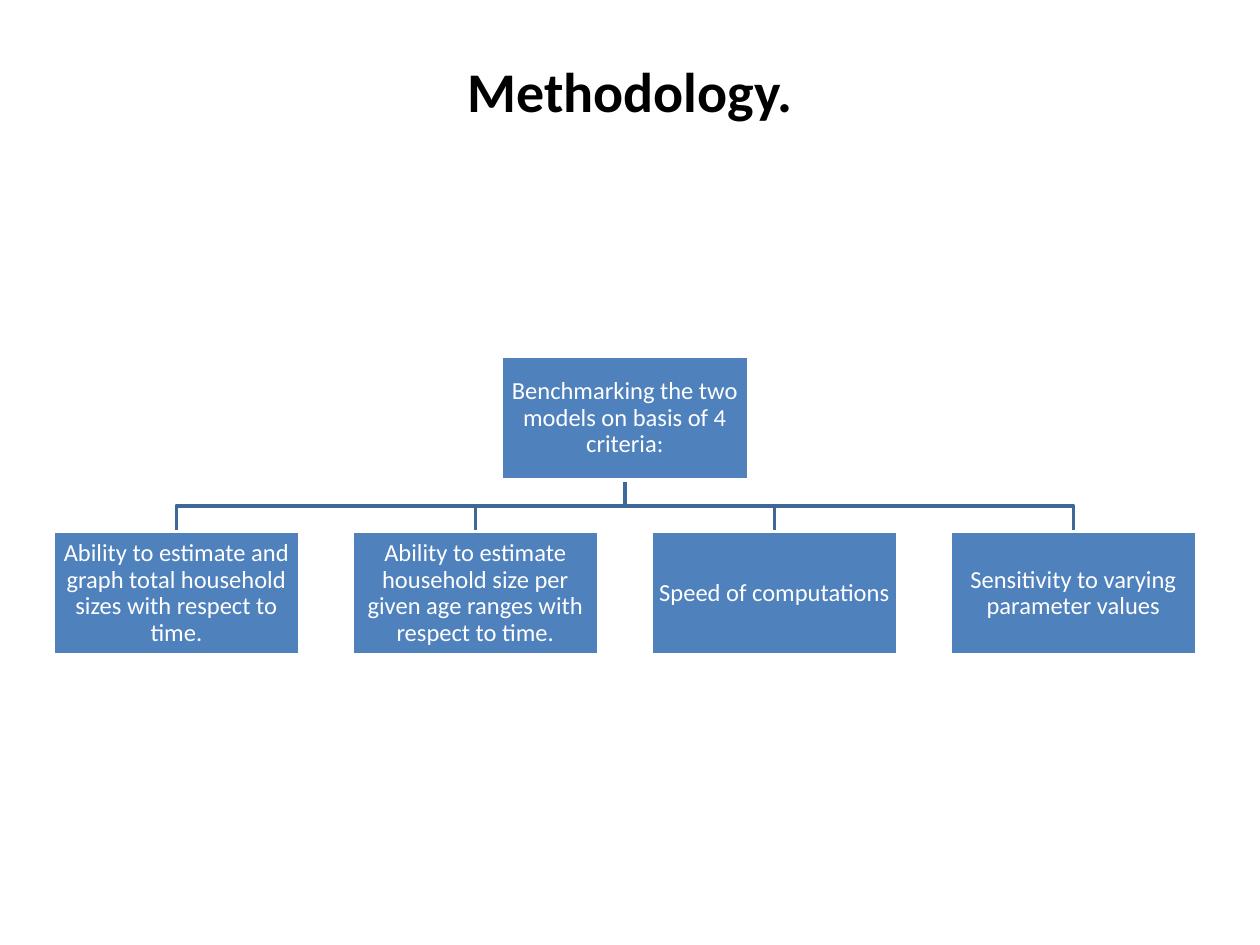
from pptx import Presentation
from pptx.dml.color import RGBColor
from pptx.enum.shapes import MSO_SHAPE
from pptx.enum.text import MSO_ANCHOR, PP_ALIGN
from pptx.util import Inches, Pt

TITLE = "Methodology."
ROOT = "Benchmarking the two models on basis of 4 criteria:"
CRITERIA = [
    "Ability to estimate and graph total household sizes with respect to time.",
    "Ability to estimate household size per given age ranges with respect to time.",
    "Speed of computations",
    "Sensitivity to varying parameter values",
]

FONT = "Calibri"
BLACK = RGBColor(0x00, 0x00, 0x00)
WHITE = RGBColor(0xFF, 0xFF, 0xFF)
BOX_BLUE = RGBColor(0x4F, 0x81, 0xBD)
BRANCH_BLUE = RGBColor(0x3F, 0x67, 0x97)

BOX_W, BOX_H = 1.96, 0.98
FIRST_LEFT, PITCH = 0.42, 2.373
ROOT_TOP, CRITERIA_TOP = 2.83, 4.22
ROOT_LEFT = FIRST_LEFT + PITCH * (len(CRITERIA) - 1) / 2
ROOT_BOTTOM = ROOT_TOP + BOX_H
INSET = Inches(0.01)


def write(frame, text, size, color, bold=False):
    frame.text = text
    frame.word_wrap = True
    frame.vertical_anchor = MSO_ANCHOR.MIDDLE
    paragraph = frame.paragraphs[0]
    paragraph.alignment = PP_ALIGN.CENTER
    font = paragraph.runs[0].font
    font.name, font.size, font.bold = FONT, Pt(size), bold
    font.color.rgb = color
    return paragraph


def add_branch(shapes, center):
    root_center = ROOT_LEFT + BOX_W / 2
    middle = (ROOT_BOTTOM + CRITERIA_TOP) / 2
    corners = [(root_center, middle), (center, middle), (center, CRITERIA_TOP)]
    builder = shapes.build_freeform(Inches(root_center), Inches(ROOT_BOTTOM))
    builder.add_line_segments([(Inches(x), Inches(y)) for x, y in corners], close=False)
    branch = builder.convert_to_shape()
    branch.shadow.inherit = False
    branch.fill.background()
    branch.line.color.rgb = BRANCH_BLUE
    branch.line.width = Pt(2)


def add_box(shapes, left, top, text):
    box = shapes.add_shape(MSO_SHAPE.RECTANGLE, Inches(left), Inches(top),
                           Inches(BOX_W), Inches(BOX_H))
    box.shadow.inherit = False
    box.fill.solid()
    box.fill.fore_color.rgb = BOX_BLUE
    box.line.color.rgb = WHITE
    box.line.width = Pt(2)
    frame = box.text_frame
    frame.margin_left = frame.margin_right = INSET
    frame.margin_top = frame.margin_bottom = INSET
    write(frame, text, 14, WHITE).line_spacing = 0.9


def main():
    deck = Presentation()
    deck.slide_width, deck.slide_height = Inches(10), Inches(7.5)
    shapes = deck.slides.add_slide(deck.slide_layouts[6]).shapes

    heading = shapes.add_textbox(Inches(0.5), Inches(0.25), Inches(9), Inches(0.93))
    write(heading.text_frame, TITLE, 32, BLACK, bold=True)

    lefts = [FIRST_LEFT + i * PITCH for i in range(len(CRITERIA))]
    for left in reversed(lefts):
        add_branch(shapes, left + BOX_W / 2)
    add_box(shapes, ROOT_LEFT, ROOT_TOP, ROOT)
    for left, criterion in zip(lefts, CRITERIA):
        add_box(shapes, left, CRITERIA_TOP, criterion)

    deck.save("out.pptx")


if __name__ == "__main__":
    main()
